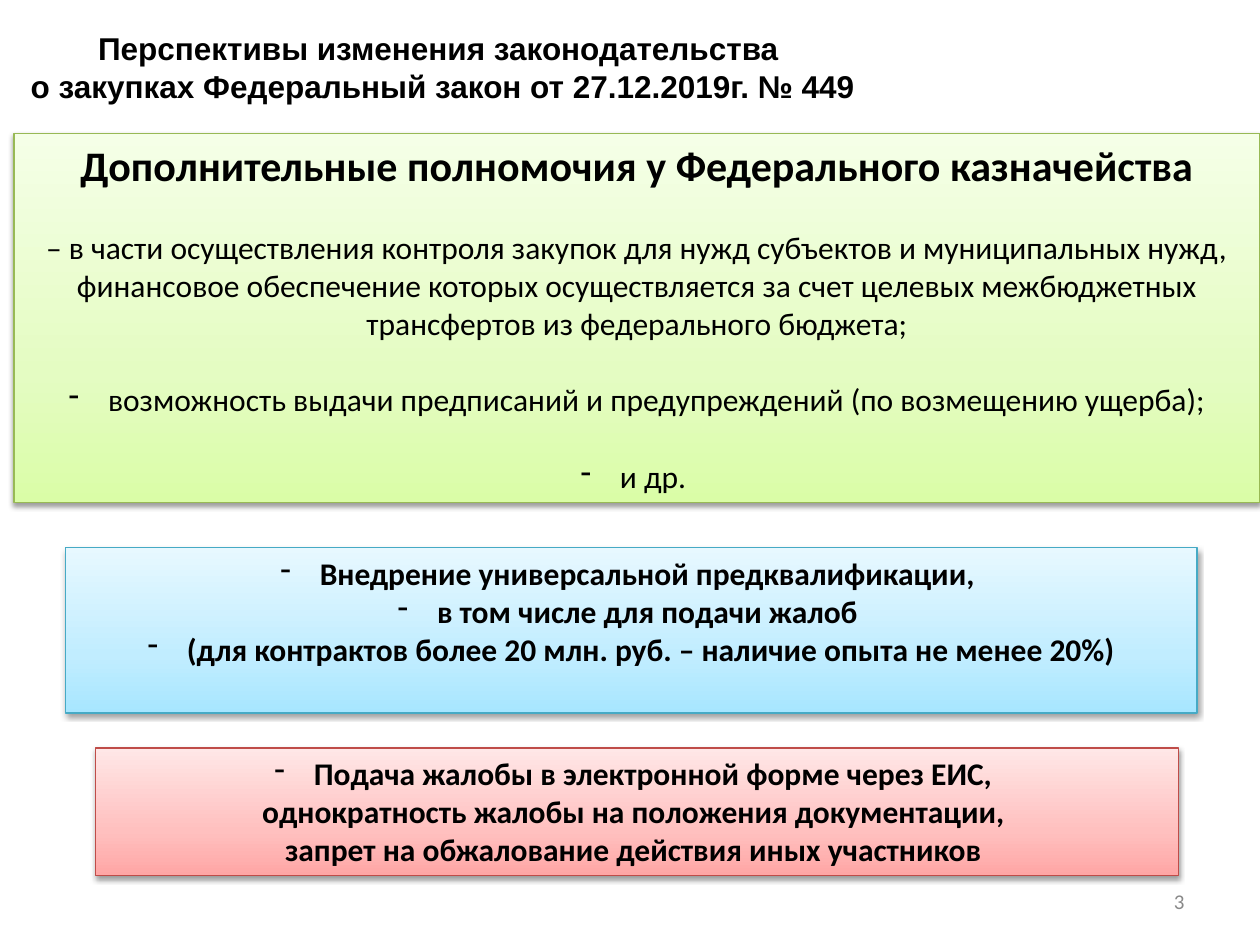
"""Slide on the outlook for procurement law: three panels of planned changes."""
from lxml import etree
from pptx import Presentation, oxml
from pptx.dml.color import RGBColor
from pptx.enum import shapes, text
from pptx.oxml import ns
from pptx.util import Pt

COLORS = {
    "text": "000000",
    "number": "898989",
    "green": ["DAFDA7", "E4FCC2", "F5FFE7"],
    "green_line": "98B955",
    "blue": ["A7E6FF", "C1EDFF", "E7F8FF"],
    "blue_line": "46AAC5",
    "red": ["FFA6A5", "FFC0BF", "FFE7E7"],
    "red_line": "BF4C48",
}
LINE_GAP = 22
HANGING = 22.5


def write(frame, lines, font="Calibri", color="text", align=text.PP_ALIGN.CENTER):
    """Fill a frame with (wording, size, bold, dashed, space before) lines."""
    for index, (wording, size, bold, dashed, gap) in enumerate(lines):
        line = frame.add_paragraph() if index else frame.paragraphs[0]
        line.alignment = align
        if gap:
            line.space_before = Pt(gap)
        if dashed:
            props = line._p.get_or_add_pPr()
            props.set("marL", str(Pt(HANGING)))
            props.set("indent", str(-Pt(HANGING)))
            etree.SubElement(props, ns.qn("a:buFontTx"))
            etree.SubElement(props, ns.qn("a:buChar"), char="-")
        run = line.add_run()
        run.text = wording
        run.font.name = font
        run.font.size = Pt(size)
        run.font.bold = bold
        run.font.color.rgb = RGBColor.from_string(COLORS[color])


def style(panel, hue):
    """Give a panel its three-stop gradient, outline and soft shadow."""
    stops = "".join(
        f'<a:gs pos="{pos}"><a:srgbClr val="{tone}"/></a:gs>'
        for pos, tone in zip((0, 35000, 100000), COLORS[hue])
    )
    panel.fill.gradient()
    panel.fill.gradient_angle = 90
    old_stops = panel._element.spPr.find(".//" + ns.qn("a:gsLst"))
    old_stops.getparent().replace(
        old_stops, oxml.parse_xml(f'<a:gsLst {ns.nsdecls("a")}>{stops}</a:gsLst>')
    )
    panel.line.color.rgb = RGBColor.from_string(COLORS[hue + "_line"])
    panel.line.width = Pt(0.75)
    panel.shadow.inherit = False
    panel._element.spPr.find(ns.qn("a:effectLst")).append(oxml.parse_xml(
        f'<a:outerShdw {ns.nsdecls("a")} blurRad="{Pt(3.1)}" dist="{Pt(1.6)}" '
        'dir="5400000" rotWithShape="0"><a:srgbClr val="000000">'
        '<a:alpha val="38000"/></a:srgbClr></a:outerShdw>'
    ))


deck = Presentation()
deck.slide_width, deck.slide_height = Pt(720), Pt(540)
slide = deck.slides.add_slide(deck.slide_layouts[6])

number = slide.shapes.add_textbox(Pt(516), Pt(500.5), Pt(168), Pt(28.75)).text_frame
number.word_wrap = True
number.vertical_anchor = text.MSO_ANCHOR.MIDDLE
write(number, [("3", 12, False, False, 0)], color="number", align=text.PP_ALIGN.RIGHT)

heading = slide.shapes.add_textbox(Pt(8), Pt(13), Pt(490), Pt(51)).text_frame
heading.word_wrap = False
write(heading, [
    ("Перспективы изменения законодательства ", 18, True, False, 0),
    ("о закупках Федеральный закон от 27.12.2019г. № 449", 18, True, False, 0),
], font="Arial")

treasury = [
    ("Дополнительные полномочия у Федерального казначейства", 24, True, False, 0),
    ("– в части осуществления контроля закупок для нужд субъектов и муниципальных нужд, "
     "финансовое обеспечение которых осуществляется за счет целевых межбюджетных "
     "трансфертов из федерального бюджета;", 18, False, False, LINE_GAP),
    ("возможность выдачи предписаний и предупреждений (по возмещению ущерба);",
     18, False, True, LINE_GAP),
    ("и др. ", 18, False, True, LINE_GAP),
]
prequalification = [
    ("Внедрение универсальной предквалификации, ", 18, True, True, 0),
    ("в том числе для подачи жалоб ", 18, True, True, 0),
    ("(для контрактов более 20 млн. руб. – наличие опыта не менее 20%)", 18, True, True, 0),
]
complaints = [
    ("Подача жалобы в электронной форме через ЕИС, ", 18, True, True, 0),
    ("однократность жалобы на положения документации, ", 18, True, False, 0),
    ("запрет на обжалование действия иных участников ", 18, True, False, 0),
]

for hue, bounds, wraps, lines in [
    ("green", (8, 76.25, 712, 211), True, treasury),
    ("blue", (37.5, 313, 646.5, 94.5), False, prequalification),
    ("red", (54.5, 427.5, 619, 72.75), True, complaints),
]:
    panel = slide.shapes.add_shape(shapes.MSO_SHAPE.RECTANGLE, *map(Pt, bounds))
    style(panel, hue)
    panel.text_frame.word_wrap = wraps
    panel.text_frame.vertical_anchor = text.MSO_ANCHOR.TOP
    write(panel.text_frame, lines)

deck.save("out.pptx")
